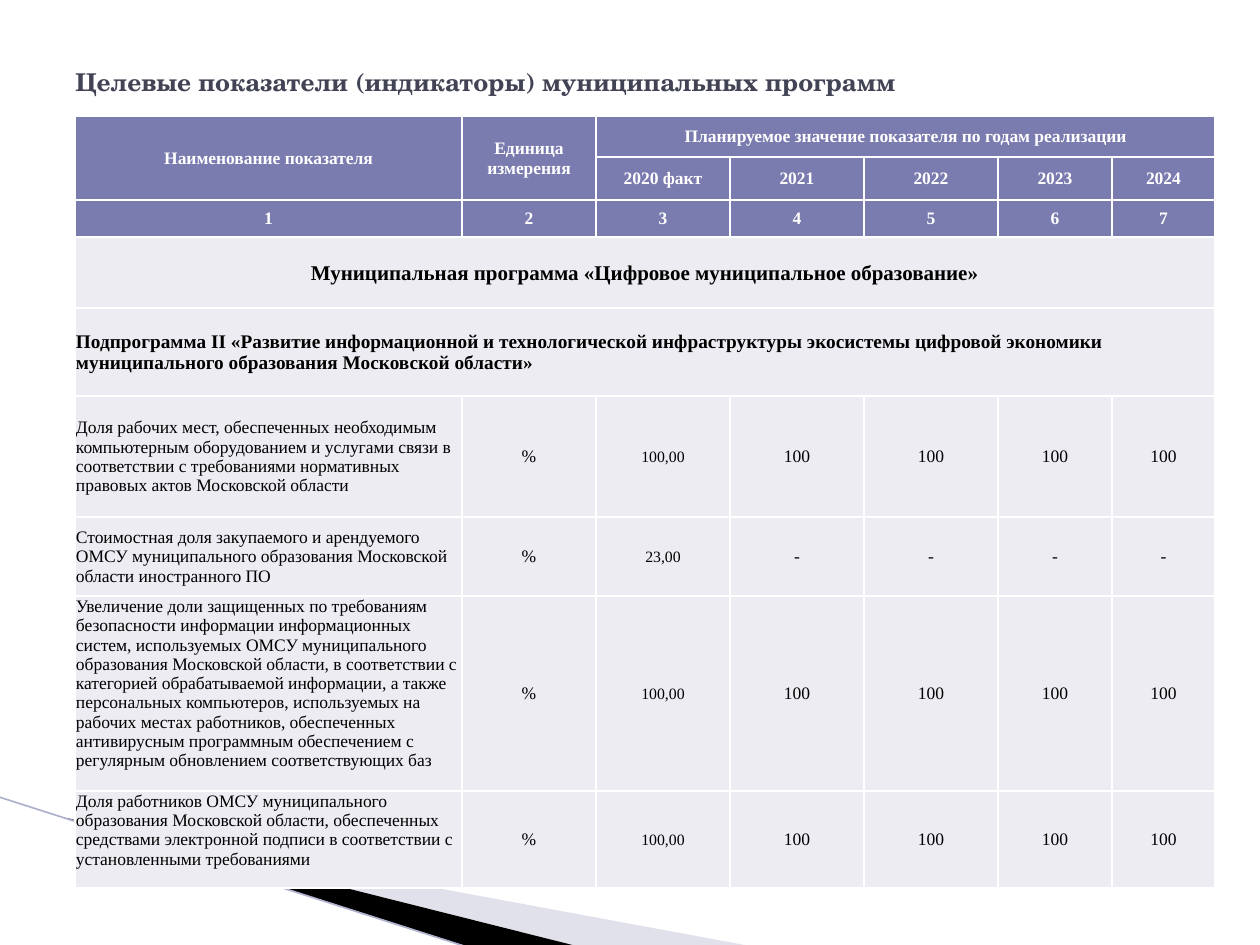
"""Builds the slide with target indicators of municipal programmes."""
from lxml import etree
from pptx import Presentation
from pptx.dml.color import RGBColor
from pptx.enum.shapes import MSO_CONNECTOR
from pptx.enum.text import MSO_ANCHOR, PP_ALIGN
from pptx.oxml.ns import qn
from pptx.util import Emu, Pt

LEFT, CENTER = PP_ALIGN.LEFT, PP_ALIGN.CENTER
TOP, MIDDLE = MSO_ANCHOR.TOP, MSO_ANCHOR.MIDDLE
STRAIGHT = MSO_CONNECTOR.STRAIGHT

WHITE = RGBColor(0xFF, 0xFF, 0xFF)
BLACK = RGBColor(0, 0, 0)
TITLE = RGBColor(0x42, 0x44, 0x56)
HEADER = RGBColor(0x7A, 0x7B, 0xAE)
BODY = RGBColor(0xEC, 0xEC, 0xF2)
LAVENDER = RGBColor(0xB6, 0xB6, 0xD1)
STRIPE = RGBColor(0xAF, 0xB0, 0xCC)

SCALE = 914400 / 126

COLUMNS = [387, 134, 134, 134, 134, 114, 103]
ROWS = [41, 40, 37, 71, 88, 121, 79, 195, 97]
HEADER_ROWS = 3
MERGES = [(0, 0, 1, 0), (0, 1, 1, 1), (0, 2, 0, 6), (3, 0, 3, 6), (4, 0, 4, 6)]
HEADINGS = [
    ["Наименование показателя", "Единица измерения",
     "Планируемое значение показателя по годам реализации"],
    ["", "", "2020 факт", "2021", "2022", "2023", "2024"],
    ["1", "2", "3", "4", "5", "6", "7"],
]
PROGRAM = "Муниципальная программа «Цифровое муниципальное образование»"
SUBPROGRAM = ("Подпрограмма II «Развитие информационной и технологической инфраструктуры "
              "экосистемы цифровой экономики муниципального образования Московской области»")
INDICATORS = [
    ("Доля рабочих мест, обеспеченных необходимым компьютерным оборудованием и услугами "
     "связи в соответствии с требованиями нормативных правовых актов Московской области",
     "100,00", "100", MIDDLE),
    ("Стоимостная доля закупаемого и арендуемого ОМСУ муниципального образования "
     "Московской области иностранного ПО", "23,00", "-", MIDDLE),
    ("Увеличение доли защищенных по требованиям безопасности информации информационных "
     "систем, используемых ОМСУ муниципального образования Московской области, "
     "в соответствии с категорией обрабатываемой информации, а также персональных "
     "компьютеров, используемых на рабочих местах работников, обеспеченных антивирусным "
     "программным обеспечением с регулярным обновлением соответствующих баз",
     "100,00", "100", TOP),
    ("Доля работников ОМСУ муниципального образования Московской области, обеспеченных "
     "средствами электронной подписи в соответствии с установленными требованиями",
     "100,00", "100", TOP),
]


def px(n):
    """Turn pixels into EMU."""
    return Emu(round(n * SCALE))


def write(tf, text, size=10, color=BLACK, bold=False, align=CENTER, font="Times New Roman"):
    """Put one formatted paragraph into a text frame."""
    p = tf.paragraphs[0]
    p.alignment = align
    r = p.add_run()
    r.text = text
    r.font.name, r.font.size, r.font.bold = font, Pt(size), bold
    r.font.color.rgb = color


class Deck:
    """Holds the style and the current slide."""

    def __init__(self, prs):
        self.slide = prs.slides.add_slide(prs.slide_layouts[6])
        self.shapes = self.slide.shapes

    def polygon(self, points, color, alpha=None):
        """Draw a filled outline without a border."""
        builder = self.shapes.build_freeform(*points[0], scale=SCALE)
        builder.add_line_segments(points[1:], close=True)
        s = builder.convert_to_shape()
        s.shadow.inherit = False
        s.line.fill.background()
        s.fill.solid()
        s.fill.fore_color.rgb = color
        if alpha is not None:
            clr = s.fill._xPr.find(qn("a:solidFill"))[0]
            etree.SubElement(clr, qn("a:alpha"), val=str(alpha * 1000))

    def line(self, x1, y1, x2, y2, color, width):
        """Draw a straight line."""
        s = self.shapes.add_connector(STRAIGHT, px(x1), px(y1), px(x2), px(y2))
        s.line.color.rgb = color
        s.line.width = Pt(width)
        etree.SubElement(s._element.spPr, qn("a:effectLst"))

    def text(self, x, y, w, h, text, **style):
        """Add a text box centred vertically."""
        tf = self.shapes.add_textbox(px(x), px(y), px(w), px(h)).text_frame
        tf.word_wrap = True
        tf.vertical_anchor = MIDDLE
        write(tf, text, **style)

    def table(self, x, y, columns, rows):
        """Add an unstyled table with the given column widths and row heights."""
        table = self.shapes.add_table(len(rows), len(columns), px(x), px(y),
                                      px(sum(columns)), px(sum(rows))).table
        table.first_row = table.horz_banding = False
        for column, width in zip(table.columns, columns):
            column.width = px(width)
        for row, height in zip(table.rows, rows):
            row.height = px(height)
        return table

    def cell(self, cell, fill, text="", anchor=MIDDLE, **style):
        """Fill, border and write one table cell."""
        cell.margin_left = cell.margin_top = cell.margin_right = px(1)
        cell.margin_bottom = 0
        cell.vertical_anchor = anchor
        tc_pr = cell._tc.get_or_add_tcPr()
        for side in ("lnL", "lnR", "lnT", "lnB"):
            ln = etree.SubElement(tc_pr, qn(f"a:{side}"), w=str(Pt(1)))
            solid = etree.SubElement(ln, qn("a:solidFill"))
            etree.SubElement(solid, qn("a:srgbClr"), val=str(WHITE))
        cell.fill.solid()
        cell.fill.fore_color.rgb = fill
        if text:
            write(cell.text_frame, text, **style)


def main():
    """Build and save the slide."""
    prs = Presentation()
    prs.slide_width, prs.slide_height = px(1260), px(945)
    deck = Deck(prs)

    deck.polygon([(69, 820), (750, 946), (575, 946), (69, 819)], LAVENDER, alpha=40)
    deck.polygon([(67, 818), (576, 946), (469, 947), (68, 819)], BLACK)
    deck.line(-1, 797, 467, 947, STRIPE, 0.95)
    deck.text(63, 38, 1134, 87, "Целевые показатели (индикаторы) муниципальных программ",
              size=14, color=TITLE, bold=True, align=LEFT, font="TeX Gyre Schola")

    table = deck.table(75, 116, COLUMNS, ROWS)
    for top, left, bottom, right in MERGES:
        table.cell(top, left).merge(table.cell(bottom, right))

    contents = {(i, j): dict(text=text, color=WHITE, bold=True)
                for i, row in enumerate(HEADINGS) for j, text in enumerate(row)}
    contents[3, 0] = dict(text=PROGRAM, size=12, bold=True)
    contents[4, 0] = dict(text=SUBPROGRAM, size=11, bold=True, align=LEFT)
    for i, (name, fact, plan, anchor) in enumerate(INDICATORS, start=5):
        contents[i, 0] = dict(text=name, anchor=anchor, align=LEFT)
        contents[i, 1] = dict(text="%")
        contents[i, 2] = dict(text=fact, size=9)
        for j in range(3, len(COLUMNS)):
            contents[i, j] = dict(text=plan)

    for i in range(len(ROWS)):
        for j in range(len(COLUMNS)):
            fill = HEADER if i < HEADER_ROWS else BODY
            deck.cell(table.cell(i, j), fill, **contents.get((i, j), {}))

    prs.save("out.pptx")


if __name__ == "__main__":
    main()
